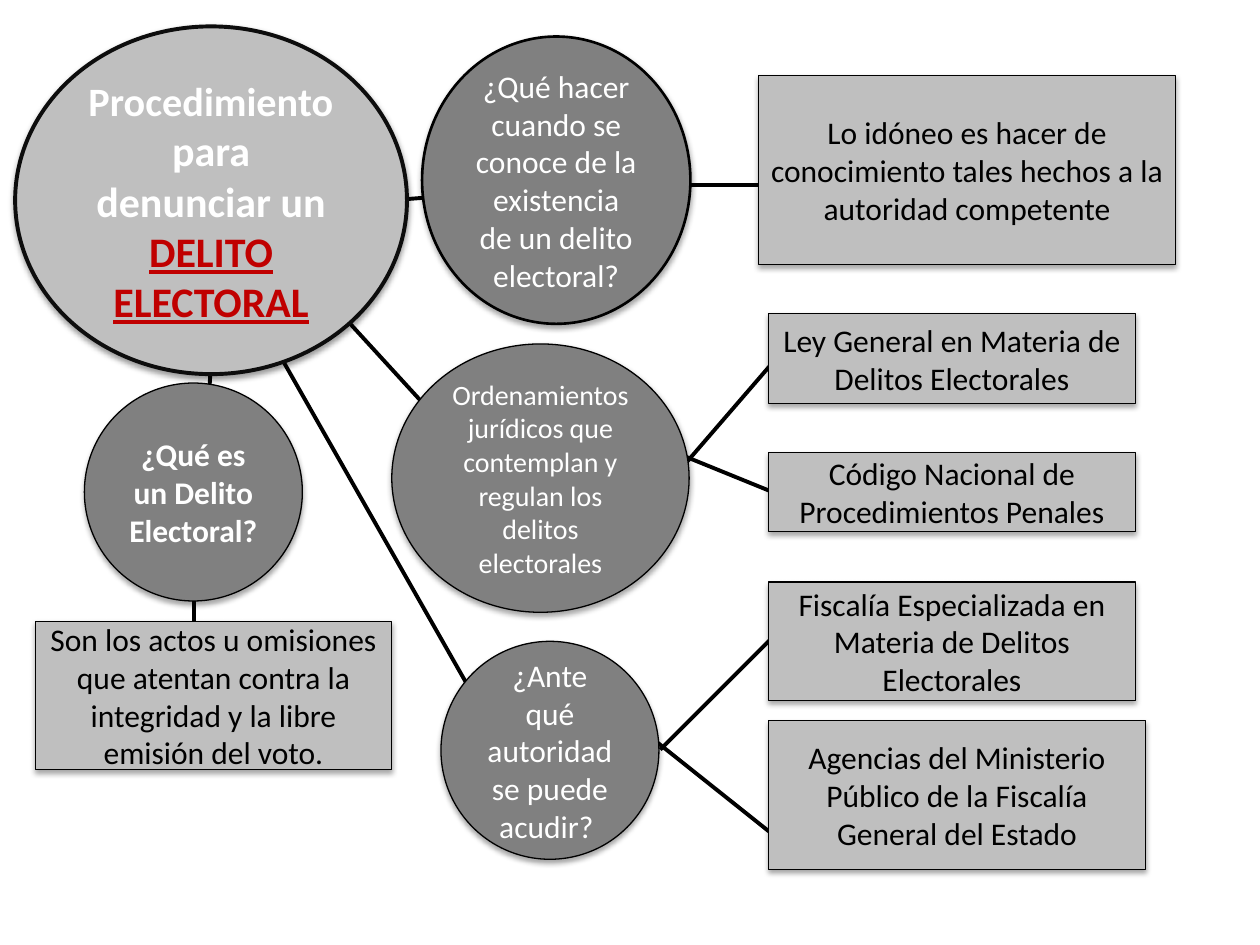
"""Concept map of the procedure for reporting an electoral crime."""
from dataclasses import dataclass

from lxml import etree
from pptx import Presentation
from pptx import util as u
from pptx.dml.color import RGBColor
from pptx.enum import shapes, text
from pptx.oxml.ns import qn

COLORS = {"black": "000000", "outline": "0D0D0D", "white": "FFFFFF",
          "light": "BFBFBF", "dark": "808080", "red": "C00000"}
CIRCLE = shapes.MSO_SHAPE.FLOWCHART_CONNECTOR
BOX = shapes.MSO_SHAPE.RECTANGLE
BOX_LEFT, BOX_WIDTH, CIRCLE_SIZE = 6.1, 2.91, 1.73


@dataclass
class Node:
    """A labelled circle or box."""
    kind: int
    left: float
    top: float
    width: float
    height: float
    label: str = ""
    size: float = 18
    bold: bool = False
    border: float = 0.75
    outline: str = "black"
    fill: str = ""
    shadow_alpha: int = 35
    shadow_distance: float = 1.8


@dataclass
class Link:
    """A straight line between two points."""
    x1: float
    y1: float
    x2: float
    y2: float


LINKS = [
    Link(1.54, 4.77, 1.54, 4.93), Link(5.24, 5.95, 6.18, 5.01),
    Link(1.67, 2.96, 1.65, 3.28), Link(2.17, 2.73, 3.78, 5.56),
    Link(5, 5.72, 6.18, 6.66), Link(5.16, 3.51, 6.34, 3.99),
    Link(5.31, 3.83, 6.26, 2.73), Link(2.56, 2.33, 3.43, 3.28),
    Link(3.23, 1.58, 3.62, 1.55), Link(5.08, 1.47, 6.34, 1.47),
]
TOPIC = Node(CIRCLE, 0.12, 0.21, 3.11, 2.76, border=2.25, outline="outline",
             fill="light", shadow_alpha=38, shadow_distance=1.6)
NODES = [
    Node(CIRCLE, 3.35, 0.29, 2.13, 2.28,
         "¿Qué hacer cuando se conoce de la existencia de un delito electoral?", border=1.5),
    Node(BOX, 6.02, 0.6, 3.31, 1.5,
         "Lo idóneo es hacer de conocimiento tales hechos a la autoridad competente", border=0.5),
    Node(CIRCLE, 3.11, 2.73, 2.36, 2.13,
         "Ordenamientos jurídicos que contemplan y regulan los delitos electorales", size=16),
    Node(BOX, BOX_LEFT, 2.49, BOX_WIDTH, 0.71, "Ley General en Materia de Delitos Electorales"),
    Node(BOX, BOX_LEFT, 3.59, BOX_WIDTH, 0.63, "Código Nacional de Procedimientos Penales"),
    Node(CIRCLE, 0.67, 3.04, CIRCLE_SIZE, CIRCLE_SIZE, "¿Qué es un Delito Electoral?", bold=True),
    Node(BOX, 0.28, 4.93, 2.83, 1.18,
         "Son los actos u omisiones que atentan contra la integridad y la libre emisión del voto."),
    Node(CIRCLE, 3.5, 5.09, CIRCLE_SIZE, CIRCLE_SIZE, "¿Ante qué autoridad se puede acudir? "),
    Node(BOX, BOX_LEFT, 4.62, BOX_WIDTH, 0.94,
         "Fiscalía Especializada en Materia de Delitos Electorales"),
    Node(BOX, BOX_LEFT, 5.72, 2.99, 1.18,
         "Agencias del Ministerio Público de la Fiscalía General del Estado"),
]


def rgb(name: str) -> RGBColor:
    """Return a named colour."""
    return RGBColor.from_string(COLORS[name])


def add_span(para, words: str, *, size: float = 18, color: str = "black",
             bold: bool = False, underline: bool = False) -> None:
    """Append formatted text to a paragraph."""
    span = para.add_run()
    span.text = words
    font = span.font
    font.name, font.size, font.bold = "Calibri", u.Pt(size), bold
    font.underline = underline
    font.color.rgb = rgb(color)


def add_shadow(shape, alpha: int, distance: float) -> None:
    """Give a shape a soft shadow that falls straight down."""
    shape.shadow.inherit = False
    effects = shape._element.spPr.find(qn("a:effectLst"))
    shadow = etree.SubElement(effects, qn("a:outerShdw"), blurRad=str(u.Pt(3.1)),
                              dist=str(u.Pt(distance)), dir="5400000", rotWithShape="0")
    color = etree.SubElement(shadow, qn("a:srgbClr"), val=COLORS["black"])
    etree.SubElement(color, qn("a:alpha"), val=str(alpha * 1000))


def add_link(page, link: Link) -> None:
    """Draw a connecting line."""
    line = page.shapes.add_connector(
        shapes.MSO_CONNECTOR.STRAIGHT, u.Inches(link.x1), u.Inches(link.y1),
        u.Inches(link.x2), u.Inches(link.y2))
    line.line.color.rgb = rgb("black")
    line.line.width = u.Pt(2.25)
    etree.SubElement(line._element.spPr, qn("a:effectLst"))


def add_node(page, node: Node):
    """Draw a node and return its centred paragraph."""
    box = page.shapes.add_shape(node.kind, u.Inches(node.left), u.Inches(node.top),
                                u.Inches(node.width), u.Inches(node.height))
    round_node = node.kind == CIRCLE
    box.fill.solid()
    box.fill.fore_color.rgb = rgb(node.fill or ("dark" if round_node else "light"))
    box.line.color.rgb = rgb(node.outline)
    box.line.width = u.Pt(node.border)
    add_shadow(box, node.shadow_alpha, node.shadow_distance)
    frame = box.text_frame
    frame.word_wrap = True
    frame.vertical_anchor = text.MSO_ANCHOR.MIDDLE
    para = frame.paragraphs[0]
    para.alignment = text.PP_ALIGN.CENTER
    if node.label:
        add_span(para, node.label, size=node.size, bold=node.bold,
                 color="white" if round_node else "black")
    return para


def main() -> None:
    """Build and save the slide."""
    deck = Presentation()
    deck.slide_width, deck.slide_height = u.Inches(10), u.Inches(7.5)
    page = deck.slides.add_slide(deck.slide_layouts[6])
    for link in LINKS:
        add_link(page, link)
    para = add_node(page, TOPIC)
    add_span(para, "Procedimiento", size=23, color="white", bold=True)
    add_span(para, " para denunciar un ", size=24, color="white", bold=True)
    add_span(para, "DELITO ELECTORAL", size=24, color="red", bold=True, underline=True)
    for node in NODES:
        add_node(page, node)
    deck.save("out.pptx")


if __name__ == "__main__":
    main()
